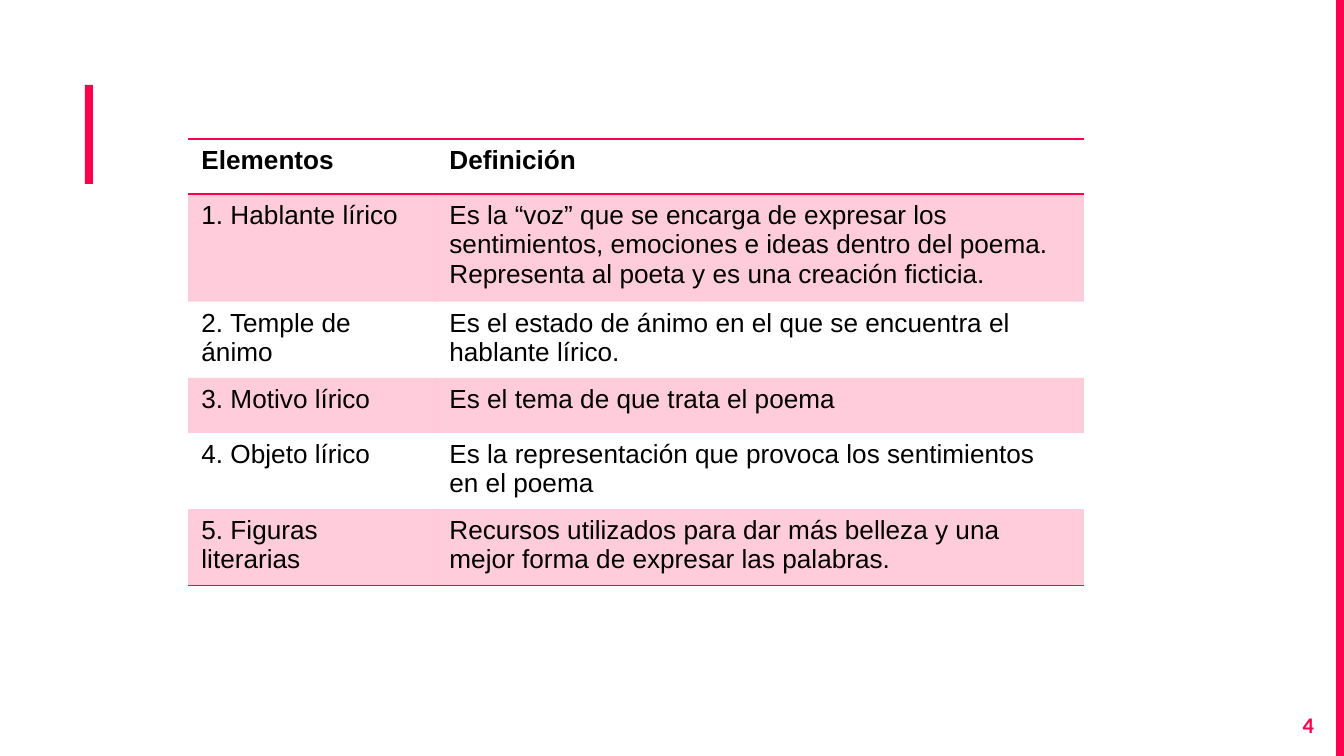
from dataclasses import dataclass
from typing import Any

from lxml.etree import SubElement
from pptx import Presentation
from pptx.dml.color import RGBColor
from pptx.enum.shapes import MSO_SHAPE as Shape
from pptx.enum.text import PP_ALIGN as Align
from pptx.oxml import parse_xml
from pptx.oxml.ns import nsdecls, qn
from pptx.util import Emu, Pt

SCALE = 914400 / 134.4
PINK = RGBColor(0xFF, 0x00, 0x4E)
BLACK = RGBColor(0x00, 0x00, 0x00)
PLAIN_TABLE = "{2D5ABB26-0587-4C30-8999-92F81FD0307C}"

ROWS = [
    ("Elementos", "Definición"),
    ("1. Hablante lírico",
     "Es la “voz” que se encarga de expresar los sentimientos, emociones e ideas "
     "dentro del poema. Representa al poeta y es una creación ficticia."),
    ("2. Temple de ánimo",
     "Es el estado de ánimo en el que se encuentra el hablante lírico."),
    ("3. Motivo lírico", "Es el tema de que trata el poema"),
    ("4. Objeto lírico",
     "Es la representación que provoca los sentimientos en el poema"),
    ("5. Figuras literarias",
     "Recursos utilizados para dar más belleza y una mejor forma de expresar "
     "las palabras."),
]


def px(length):
    return Emu(round(length * SCALE))


def set_values(target, values):
    for name, value in values.items():
        setattr(target, name, value)


@dataclass
class Painter:
    page: Any
    accent: RGBColor = PINK
    ink: RGBColor = BLACK
    tint: int = 20

    def add_span(self, para, text, color, **font):
        span = para.add_run()
        span.text = text
        set_values(span.font, font)
        span.font.color.rgb = color

    def bar(self, *place):
        box = self.page.shapes.add_shape(Shape.RECTANGLE, *map(px, place))
        box.shadow.inherit = False
        box.fill.solid()
        box.fill.fore_color.rgb = self.accent
        box.line.fill.background()

    def page_number(self, text, *place):
        box = self.page.shapes.add_textbox(*map(px, place))
        frame = box.text_frame
        margins = ("margin_left", "margin_top", "margin_right", "margin_bottom")
        set_values(frame, {"word_wrap": True, **dict.fromkeys(margins, px(13))})
        para = frame.paragraphs[0]
        para.alignment = Align.RIGHT
        self.add_span(para, text, self.accent, name="Calibri", size=Pt(12), bold=True)

    def shade(self, cell):
        cell.fill.solid()
        cell.fill.fore_color.rgb = self.accent
        color = cell._tc.tcPr.find(".//" + qn("a:srgbClr"))
        SubElement(color, qn("a:alpha"), val=str(self.tint * 1000))

    def rule(self, cell, sides):
        for order, side in enumerate(sides):
            cell._tc.get_or_add_tcPr().insert(order, parse_xml(
                f'<a:ln{side} {nsdecls("a")} w="{Pt(1)}"><a:solidFill>'
                f'<a:srgbClr val="{self.accent}"/></a:solidFill></a:ln{side}>'))

    def table(self, rows, left, top, widths, row_height):
        size = (sum(widths), row_height * len(rows))
        holder = self.page.shapes.add_table(
            len(rows), len(widths), *map(px, (left, top, *size)))
        table = holder.table
        table._tbl.tblPr.find(qn("a:tableStyleId")).text = PLAIN_TABLE
        set_values(table, {"first_row": True, "horz_banding": False})
        for column, width in zip(table.columns, widths):
            column.width = px(width)
        borders = {0: "TB", len(rows) - 1: "B"}
        for row, texts in enumerate(rows):
            for column, text in enumerate(texts):
                cell = table.cell(row, column)
                self.add_span(cell.text_frame.paragraphs[0], text, self.ink,
                              name="Arial", size=Pt(14), bold=row == 0)
                if row % 2:
                    self.shade(cell)
                else:
                    cell.fill.background()
                self.rule(cell, borders.get(row, ""))


def main():
    deck = Presentation()
    set_values(deck, {"slide_width": px(1344), "slide_height": px(756)})
    painter = Painter(deck.slides.add_slide(deck.slide_layouts[6]))
    painter.bar(85, 85, 8, 99)
    painter.bar(1336, 0, 8, 756)
    painter.page_number("4", 1246, 698, 81, 58)
    painter.table(ROWS, 188, 139, (248, 648), 55)
    deck.save("out.pptx")


if __name__ == "__main__":
    main()
